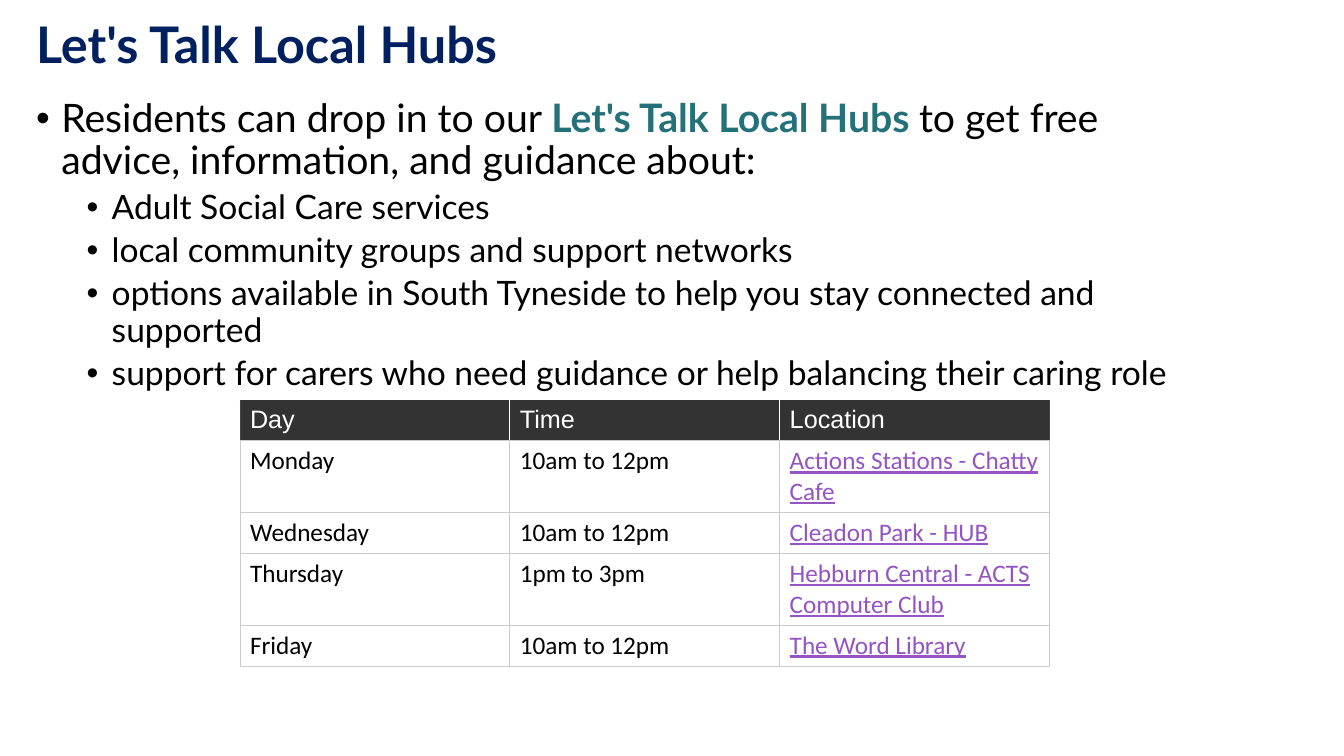
from dataclasses import dataclass

from lxml import etree
from pptx import Presentation
from pptx.dml.color import RGBColor
from pptx.enum.text import MSO_ANCHOR
from pptx.oxml.ns import qn
from pptx.slide import Slide
from pptx.util import Inches, Pt

MIDDLE, TOP = MSO_ANCHOR.MIDDLE, MSO_ANCHOR.TOP
BLACK, WHITE, NAVY, TEAL = "000000", "FFFFFF", "002060", "257179"
PURPLE, CHARCOAL, DARK_GREY, LIGHT_GREY = "9454C3", "333333", "444444", "CCCCCC"


@dataclass
class TextRun:
    text: str
    color: str = BLACK
    bold: bool = False


@dataclass
class Line:
    runs: list[TextRun]
    size: int
    level: int | None = None  # no level means no bullet
    space_before: int = 0


@dataclass
class Session:
    day: str
    time: str
    location: str
    height: float


TITLE = [Line([TextRun("Let's Talk Local Hubs", NAVY, True)], 36)]
INTRODUCTION = Line([
    TextRun("Residents can drop in to our "),
    TextRun("Let's Talk Local Hubs ", TEAL, True),
    TextRun("to get free advice, information, and guidance about:"),
], 28, 0)
TOPICS = [
    "Adult Social Care services",
    "local community groups and support networks",
    "options available in South Tyneside to help you stay connected and supported",
    "support for carers who need guidance or help balancing their caring role",
]
HEADER = Session("Day", "Time", "Location", 0.39)
SESSIONS = [
    Session("Monday", "10am to 12pm", "Actions Stations - Chatty Cafe", 0.71),
    Session("Wednesday", "10am to 12pm", "Cleadon Park - HUB", 0.41),
    Session("Thursday", "1pm to 3pm", "Hebburn Central - ACTS Computer Club", 0.71),
    Session("Friday", "10am to 12pm", "The Word Library", 0.41),
]


def rgb(color: str) -> RGBColor:
    return RGBColor.from_string(color)


def format_font(font, color: str, **values) -> None:
    for name, value in values.items():
        setattr(font, name, value)
    font.color.rgb = rgb(color)


def add_bullet(paragraph, level: int) -> None:
    properties = paragraph._p.get_or_add_pPr()
    properties.set("marL", str(Inches(0.25 + 0.5 * level)))
    properties.set("indent", str(Inches(-0.25)))
    etree.SubElement(properties, qn("a:buFont"), typeface="Arial")
    etree.SubElement(properties, qn("a:buChar"), char="•")
    paragraph.level = level


def add_text(slide: Slide, box: tuple, lines: list[Line], anchor) -> None:
    frame = slide.shapes.add_textbox(*map(Inches, box)).text_frame
    frame.word_wrap = True
    frame.vertical_anchor = anchor
    for index, line in enumerate(lines):
        paragraph = frame.add_paragraph() if index else frame.paragraphs[0]
        if line.level is not None:
            add_bullet(paragraph, line.level)
        paragraph.line_spacing = 0.9
        paragraph.space_before = Pt(line.space_before)
        for part in line.runs:
            run = paragraph.add_run()
            run.text = part.text
            format_font(run.font, part.color, name="Lato", size=Pt(line.size), bold=part.bold)


def set_borders(cell, colors: dict[str, str]) -> None:
    properties = cell._tc.get_or_add_tcPr()
    for side, color in colors.items():
        border = etree.SubElement(properties, qn(f"a:ln{side}"), w=str(Pt(0.5)))
        fill = etree.SubElement(border, qn("a:solidFill"))
        etree.SubElement(fill, qn("a:srgbClr"), val=color)


def fill_cell(cell, text: str, row: int, column: int) -> None:
    is_header, is_location = row == 0, column == 2
    borders = dict.fromkeys("LRTB", LIGHT_GREY)
    if is_header:
        borders.update(
            L=WHITE if column else DARK_GREY,
            R=DARK_GREY if is_location else WHITE,
            T=CHARCOAL,
        )
    set_borders(cell, borders)
    if is_header:
        cell.fill.solid()
        cell.fill.fore_color.rgb = rgb(CHARCOAL)
    else:
        cell.fill.background()
    run = cell.text_frame.paragraphs[0].add_run()
    run.text = text
    format_font(
        run.font,
        WHITE if is_header else PURPLE if is_location else BLACK,
        name="Arial" if is_header else "Calibri",
        size=Pt(18),
        bold=False,
        underline=is_location and not is_header,
    )


def add_timetable(slide: Slide) -> None:
    sessions = [HEADER, *SESSIONS]
    height = sum(session.height for session in sessions)
    table = slide.shapes.add_table(
        len(sessions), 3, Inches(2.38), Inches(3.97), Inches(8.03), Inches(height)
    ).table
    table.first_row = table.horz_banding = False
    for row, session in enumerate(sessions):
        table.rows[row].height = Inches(session.height)
        for column, text in enumerate((session.day, session.time, session.location)):
            fill_cell(table.cell(row, column), text, row, column)


def main() -> None:
    presentation = Presentation()
    presentation.slide_width = Inches(13.33)
    presentation.slide_height = Inches(7.5)
    slide = presentation.slides.add_slide(presentation.slide_layouts[6])

    # Title and bulleted text
    add_text(slide, (0.26, 0, 12, 0.94), TITLE, MIDDLE)
    topics = [Line([TextRun(topic)], 24, 1, 5) for topic in TOPICS]
    add_text(slide, (0.26, 0.93, 11.58, 4.55), [INTRODUCTION, *topics], TOP)

    # Weekly timetable
    add_timetable(slide)

    presentation.save("out.pptx")


if __name__ == "__main__":
    main()
